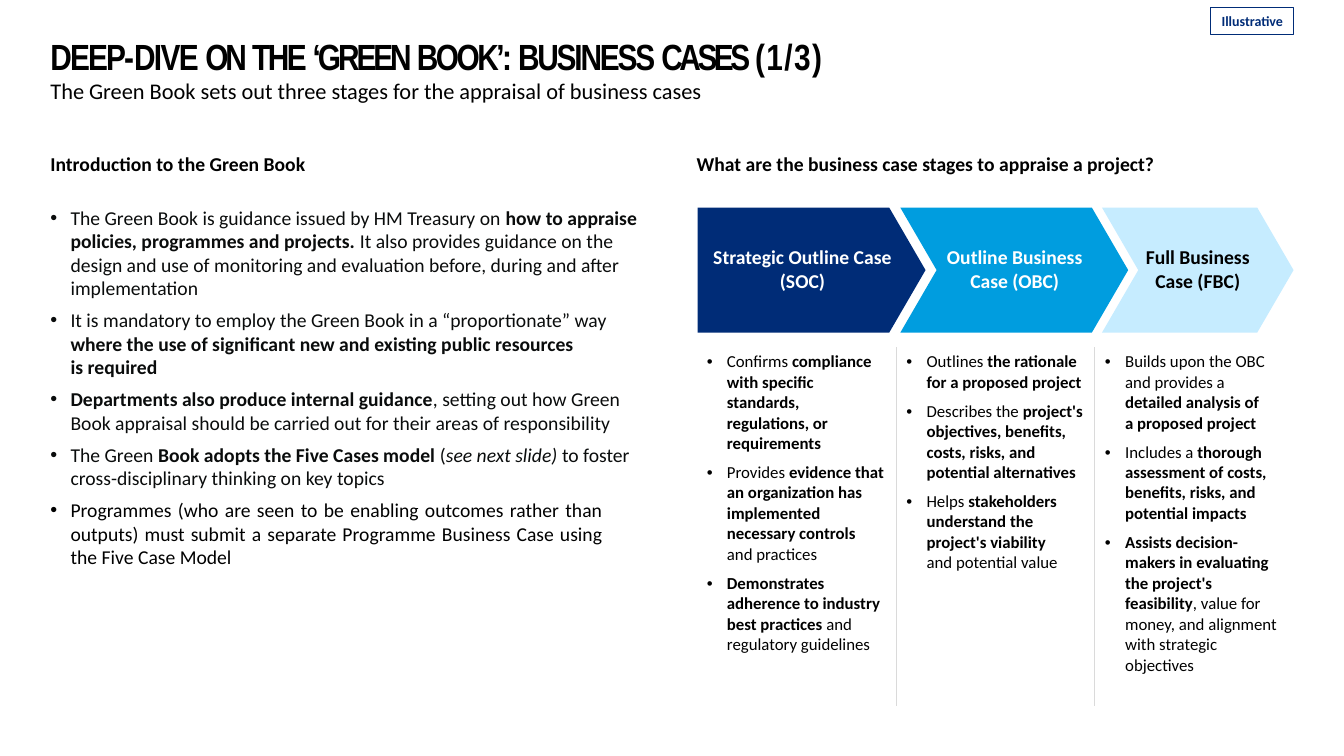
from dataclasses import dataclass

from lxml.etree import SubElement, fromstring
from pptx import Presentation
from pptx.dml.color import RGBColor
from pptx.enum.shapes import MSO_SHAPE
from pptx.enum.text import PP_ALIGN
from pptx.oxml.ns import nsdecls, qn
from pptx.util import Inches, Pt


@dataclass(frozen=True)
class Theme:
    black: str = "000000"
    ink: str = "0A0C0C"
    white: str = "FFFFFF"
    navy: str = "002C77"
    blue: str = "009DDF"
    pale: str = "C6ECFF"
    rule: str = "DADADA"
    heading_font: str = "Arial Narrow"
    body_font: str = "Calibri"
    title: int = 26
    subtitle: int = 16
    body: int = 14
    cell: int = 12
    tag: int = 10


theme = Theme()


def write(frame, texts, size, color, first=1.1, before=0, bullet=None, align=PP_ALIGN.LEFT, margins=(0, 0.01)):
    left, top = (Inches(value) for value in margins)
    frame_format = {"word_wrap": True, "margin_left": left, "margin_top": top, "margin_right": 0, "margin_bottom": 0}
    for name, value in frame_format.items():
        setattr(frame, name, value)
    for index, text in enumerate(texts):
        para = frame.add_paragraph() if index else frame.paragraphs[0]
        para.alignment = align
        para.space_before = Pt(before if index else first)
        if bullet:
            properties = para._p.get_or_add_pPr()
            properties.set("marL", str(Inches(bullet)))
            properties.set("indent", str(Inches(-0.2)))
            SubElement(properties, qn("a:buFont"), typeface="Arial")
            SubElement(properties, qn("a:buChar"), char="•")
        for bold_index, bold_part in enumerate(text.split("*")):
            for italic_index, italic_part in enumerate(bold_part.split("_")):
                for line_index, line in enumerate(italic_part.split("|")):
                    if line_index:
                        para.add_line_break()
                    if not line:
                        continue
                    span = para.add_run()
                    span.text = line
                    span.font.color.rgb = RGBColor.from_string(color)
                    font_format = {
                        "name": theme.body_font,
                        "size": Pt(size),
                        "bold": bold_index % 2 == 1,
                        "italic": italic_index % 2 == 1,
                    }
                    for name, value in font_format.items():
                        setattr(span.font, name, value)


deck = Presentation()
deck.slide_width, deck.slide_height = Inches(13.33), Inches(7.5)
page = deck.slides.add_slide(deck.slide_layouts[6])


def add_text(at, texts, size, color, **options):
    box = page.shapes.add_textbox(*(Inches(value) for value in at))
    write(box.text_frame, texts, size, color, **options)
    return box


title_words = [
    ("DEEP-", -1.4), ("DIVE ", -1.2), ("ON ", -2.3), ("THE ", -1.8), ("‘GREEN ", -2.2),
    ("BOOK’: ", -1.8), ("BUSINESS ", -1.6), ("CASES ", -2.5), ("(1/3)", 1),
]
title_text = "*" + "**".join(word for word, tracking in title_words) + "*"
subtitle_text = "The Green Book sets out three stages for the appraisal of business cases"
title_box = add_text((0.49, 0.34, 10.68, 0.71), [title_text], theme.title, theme.black, first=1, margins=(0.01, 0.01))
title_para = title_box.text_frame.paragraphs[0]
title_para.line_spacing = Pt(30.6)
for span, (word, tracking) in zip(title_para.runs, title_words):
    span.font.name = theme.heading_font
    span._r.get_or_add_rPr().set("spc", str(round(tracking * 100)))
subtitle_para = title_box.text_frame.add_paragraph()
subtitle_para.line_spacing = Pt(18.6)
subtitle_span = subtitle_para.add_run()
subtitle_span.text = subtitle_text
subtitle_span.font.color.rgb = RGBColor.from_string(theme.black)
for name, value in {"name": theme.body_font, "size": Pt(theme.subtitle), "bold": False}.items():
    setattr(subtitle_span.font, name, value)

headings = [
    (0.49, 2.56, "*Introduction to the Green Book*"),
    (6.9, 4.7, "*What are the business case stages to appraise a project?*"),
]
for left, width, heading in headings:
    add_text((left, 1.5, width, 0.26), [heading], theme.body, theme.black, margins=(0.01, 0.01))

introduction = [
    "The Green Book is guidance issued by HM Treasury on *how to appraise policies, programmes and projects.* "
    "It also provides guidance on the design and use of monitoring and evaluation before, during and after implementation",
    "It is mandatory to employ the Green Book in a “proportionate” way "
    "*where the use of significant new and existing public resources|is required*",
    "*Departments also produce internal guidance*, setting out how Green "
    "Book appraisal should be carried out for their areas of responsibility",
    "The Green *Book adopts the Five Cases model* (_see next slide)_ to foster cross-disciplinary thinking on key topics",
    "Programmes (who are seen to be enabling outcomes rather than "
    "outputs) must submit a separate Programme Business Case using|the Five Case Model",
]
introduction_box = add_text(
    (0.49, 2.03, 5.86, 3.63), introduction, theme.body, theme.ink, before=6, bullet=0.21
)
programmes_para = introduction_box.text_frame.paragraphs[-1]
programmes_para.alignment = PP_ALIGN.JUSTIFY
programmes_para._p.get_or_add_pPr().set("marR", str(Inches(0.37)))
for span in programmes_para.runs:
    span.font.color.rgb = RGBColor.from_string(theme.black)

stage_points = [
    (1.91, 0.23, [
        "Confirms *compliance|with specific|standards,|regulations, or|requirements*",
        "Provides *evidence that|an organization has|implemented|necessary controls*|and practices",
        "*Demonstrates|adherence to industry|best practices* and|regulatory guidelines",
    ]),
    (1.97, 0.3, [
        "Outlines *the rationale|for a proposed project*",
        "Describes the *project's|objectives, benefits,|costs, risks, and|potential alternatives*",
        "Helps *stakeholders|understand the|project's viability*|and potential value",
    ]),
    (1.86, 0.3, [
        "Builds upon the OBC|and provides a|*detailed analysis of|a proposed project*",
        "Includes a *thorough|assessment of costs,|benefits, risks, and|potential impacts*",
        "*Assists decision-|makers in evaluating|the project's|feasibility*, value for|money, and alignment|with strategic|objectives",
    ]),
]
table = page.shapes.add_table(1, 3, Inches(6.98), Inches(3.45), Inches(5.74), Inches(3.55)).table
table.first_row = False
table.horz_banding = False
for column, (width, indent, points) in enumerate(stage_points):
    table.columns[column].width = Inches(width)
    cell = table.cell(0, column)
    for name in ("margin_left", "margin_right", "margin_bottom"):
        setattr(cell, name, 0)
    cell.margin_top = Inches(0.04)
    write(cell.text_frame, points, theme.cell, theme.black, first=3, before=6, bullet=indent)
    cell.text_frame._txBody.bodyPr.attrib.clear()
    cell.fill.background()
    sides = [("lnR", column < 2), ("lnL", column > 0)]
    for side, ruled in sides:
        if ruled:
            border = fromstring(
                f'<a:{side} {nsdecls("a")} w="{Pt(0.75)}"><a:solidFill>'
                f'<a:srgbClr val="{theme.rule}"/></a:solidFill></a:{side}>'
            )
            cell._tc.get_or_add_tcPr().insert(0, border)

top, middle, bottom, tip = 2.06, 2.68, 3.3, 0.36
stages = [
    (6.92, 9.18, 0, theme.navy, theme.white, 7.06, 1.8, ["*Strategic Outline Case*", "*(SOC)*"]),
    (8.93, 11.19, tip, theme.blue, theme.white, 9.38, 1.37, ["*Outline Business*", "*Case (OBC)*"]),
    (10.93, 12.83, tip, theme.pale, theme.black, 11.35, 1.06, ["*Full Business*", "*Case (FBC)*"]),
]
for left, right, notch, fill, color, label_left, label_width, label in stages:
    corners = [(right - tip, top), (right, middle), (right - tip, bottom), (left, bottom)]
    if notch:
        corners.append((left + notch, middle))
    outline = page.shapes.build_freeform(Inches(left), Inches(top))
    outline.add_line_segments([(Inches(x), Inches(y)) for x, y in corners], close=True)
    arrow = outline.convert_to_shape()
    arrow.shadow.inherit = False
    arrow.fill.solid()
    arrow.fill.fore_color.rgb = RGBColor.from_string(fill)
    arrow.line.fill.background()
    add_text((label_left, 2.42, label_width, 0.5), label, theme.body, color, align=PP_ALIGN.CENTER)

tag = page.shapes.add_shape(MSO_SHAPE.RECTANGLE, Inches(12.01), Inches(0.07), Inches(0.82), Inches(0.27))
tag.shadow.inherit = False
tag.fill.background()
tag.line.color.rgb = RGBColor.from_string(theme.navy)
tag.line.width = Pt(0.75)
write(tag.text_frame, ["*Illustrative*"], theme.tag, theme.navy, first=0, align=PP_ALIGN.CENTER, margins=(0, 0))

deck.save("out.pptx")
